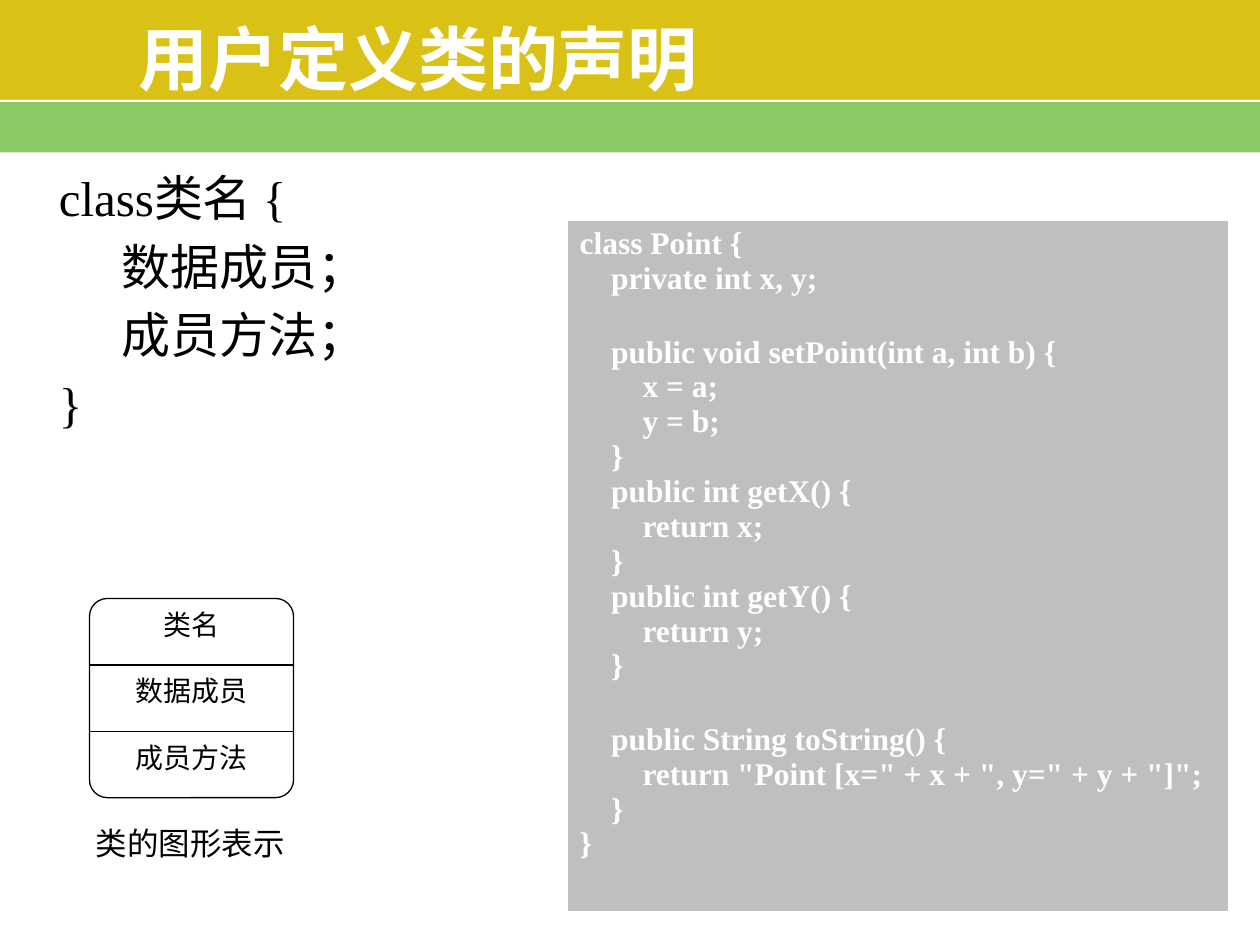
from pptx import Presentation
from pptx.dml.color import RGBColor
from pptx.enum.shapes import MSO_CONNECTOR as Connector, MSO_SHAPE as Shape
from pptx.enum.text import MSO_ANCHOR as Anchor, PP_ALIGN as Align
from pptx.oxml.ns import qn
from pptx.util import Inches, Pt
from lxml.etree import SubElement

GOLD = RGBColor(0xD9, 0xC2, 0x15)
GREEN = RGBColor(0x89, 0xCA, 0x64)
GREY = RGBColor(0xBF, 0xBF, 0xBF)
WHITE = RGBColor(0xFF, 0xFF, 0xFF)
BLACK = RGBColor(0x00, 0x00, 0x00)
SANS = "Noto Sans CJK SC"
SERIF = "Times New Roman"
COLUMNS, ROWS = 100, 75

SYNTAX = ["class类名 {", "\t数据成员；", "\t成员方法；", "}"]
PARTS = ["类名", "数据成员", "成员方法"]
POINT_CODE = """class Point {
    private int x, y;

    public void setPoint(int a, int b) {
        x = a;
        y = b;
    }
    public int getX() {
        return x;
    }
    public int getY() {
        return y;
    }

    public String toString() {
        return "Point [x=" + x + ", y=" + y + "]";
    }
}"""


class SlideBuilder:
    """Draws styled elements on one page, placed by grid columns and rows."""

    def __init__(self, deck):
        self.column = deck.slide_width / COLUMNS
        self.row = deck.slide_height / ROWS
        self.page = deck.slides.add_slide(deck.slide_layouts[6])

    def place(self, left, top, width, height):
        return (round(left * self.column), round(top * self.row),
                round(width * self.column), round(height * self.row))

    def fill_text(self, frame, lines, size, font=SANS, color=BLACK, bold=False, gap=0, align=Align.LEFT):
        for index, line in enumerate(lines):
            para = frame.add_paragraph() if index else frame.paragraphs[0]
            para.alignment = align
            para.space_before = Pt(gap if index else 0)
            para.font.size = Pt(size)
            if not line:
                continue
            span = para.add_run()
            span.text = line
            span.font.name = font
            span.font.size = Pt(size)
            span.font.bold = bold
            span.font.color.rgb = color
            SubElement(span.font._element, qn("a:ea"), typeface=SANS)

    def text(self, area, lines, size, wrap=True, anchor=Anchor.TOP, inset=0.05, **style):
        box = self.page.shapes.add_textbox(*self.place(*area))
        frame = box.text_frame
        frame.word_wrap = wrap
        frame.vertical_anchor = anchor
        frame.margin_top = frame.margin_bottom = Inches(inset)
        self.fill_text(frame, lines, size, **style)

    def block(self, area, fill, kind=Shape.RECTANGLE, outline=None, corner=None):
        block = self.page.shapes.add_shape(kind, *self.place(*area))
        block.shadow.inherit = False
        block.fill.solid()
        block.fill.fore_color.rgb = fill
        if outline is None:
            block.line.fill.background()
        else:
            block.line.color.rgb = outline
            block.line.width = Pt(0.75)
        if corner is not None:
            block.adjustments[0] = corner

    def rule(self, left, top, width, color, weight):
        x, y, length, _ = self.place(left, top, width, 0)
        rule = self.page.shapes.add_connector(Connector.STRAIGHT, x, y, x + length, y)
        rule.line.color.rgb = color
        rule.line.width = Pt(weight)
        SubElement(rule._element.spPr, qn("a:effectLst"))

    def code_table(self, area, code, size):
        table = self.page.shapes.add_table(1, 1, *self.place(*area)).table
        cell = table.cell(0, 0)
        properties = cell._tc.get_or_add_tcPr()
        for side, weight in zip("LRTB", (1, 1, 1, 3)):
            border = SubElement(properties, qn(f"a:ln{side}"), w=str(Pt(weight)))
            paint = SubElement(border, qn("a:solidFill"))
            SubElement(paint, qn("a:srgbClr"), val=str(WHITE))
        cell.fill.solid()
        cell.fill.fore_color.rgb = GREY
        self.fill_text(cell.text_frame, code.split("\n"), size, font=SERIF, color=WHITE, bold=True)

    def class_diagram(self, left, top, width, row_height, labels):
        self.block((left, top, width, row_height * len(labels)), WHITE,
                   Shape.ROUNDED_RECTANGLE, BLACK, 0.09)
        for index, label in enumerate(labels):
            row_top = top + index * row_height
            if index:
                self.rule(left, row_top, width, BLACK, 0.75)
            label_width = 2 + 2.25 * len(label)
            self.text((left + (width - label_width) / 2, row_top + 0.7, label_width, 2.9),
                      [label], 16, wrap=False, inset=0, align=Align.CENTER)


def main():
    deck = Presentation()
    deck.slide_width, deck.slide_height = Inches(10), Inches(7.5)
    slide = SlideBuilder(deck)
    slide.block((0, 7.9, COLUMNS, 4.2), GREEN)
    slide.block((0, 0, COLUMNS, 7.9), GOLD)
    slide.rule(0, 8, COLUMNS, WHITE, 1)
    slide.text((10, 1.9, 77.5, 5.3), ["用户定义类的声明"], 40,
               anchor=Anchor.MIDDLE, color=WHITE, bold=True)
    slide.text((3.7, 12.8, 93.3, 57.5), SYNTAX, 28, font=SERIF, gap=5.6)
    slide.text((6.6, 64.9, 17.2, 4), ["类的图形表示"], 18, wrap=False)
    slide.code_table((45, 17.5, 52.5, 54.8), POINT_CODE, 18)
    slide.class_diagram(7.1, 47.5, 16.2, 5.27, PARTS)
    deck.save("out.pptx")


if __name__ == "__main__":
    main()
